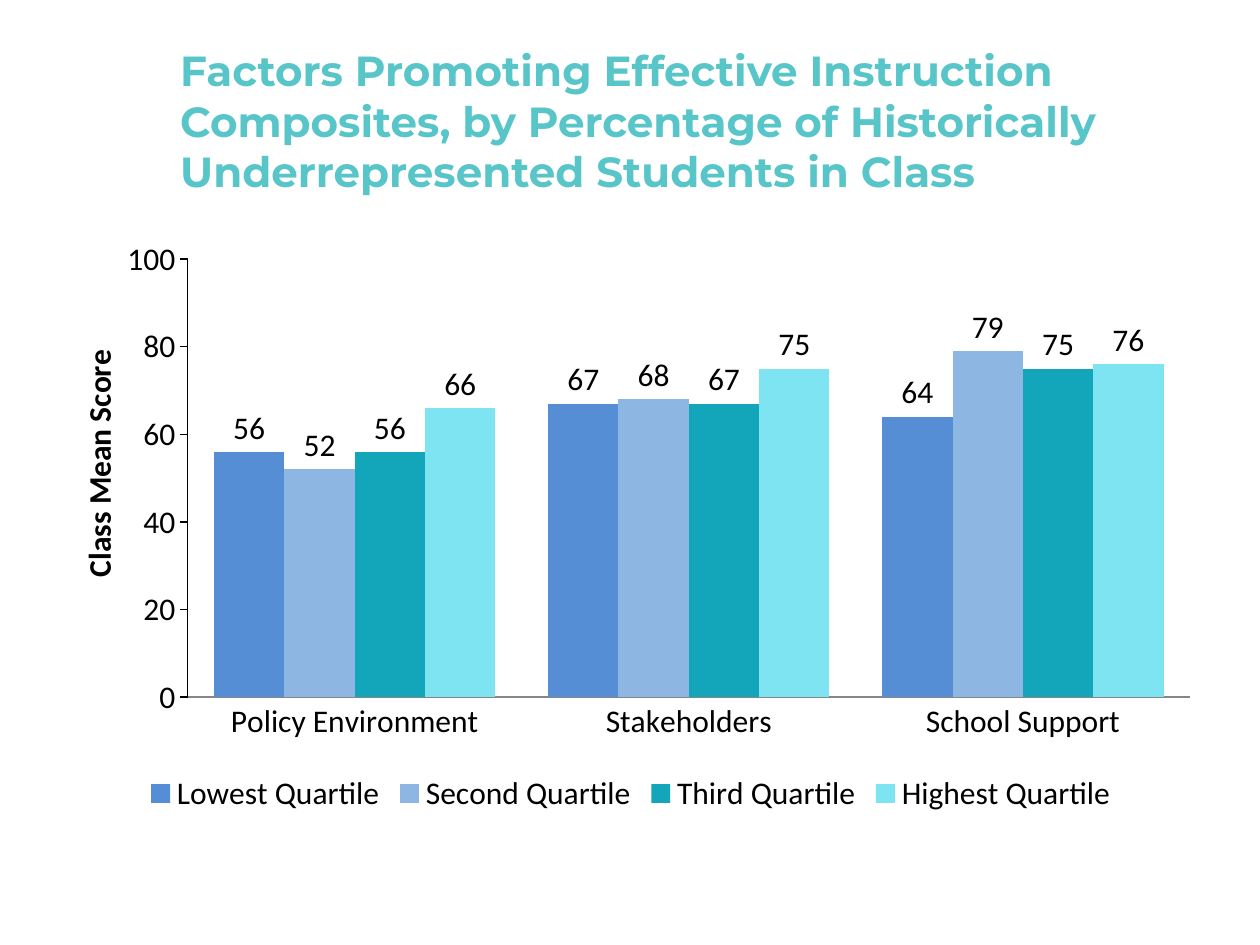
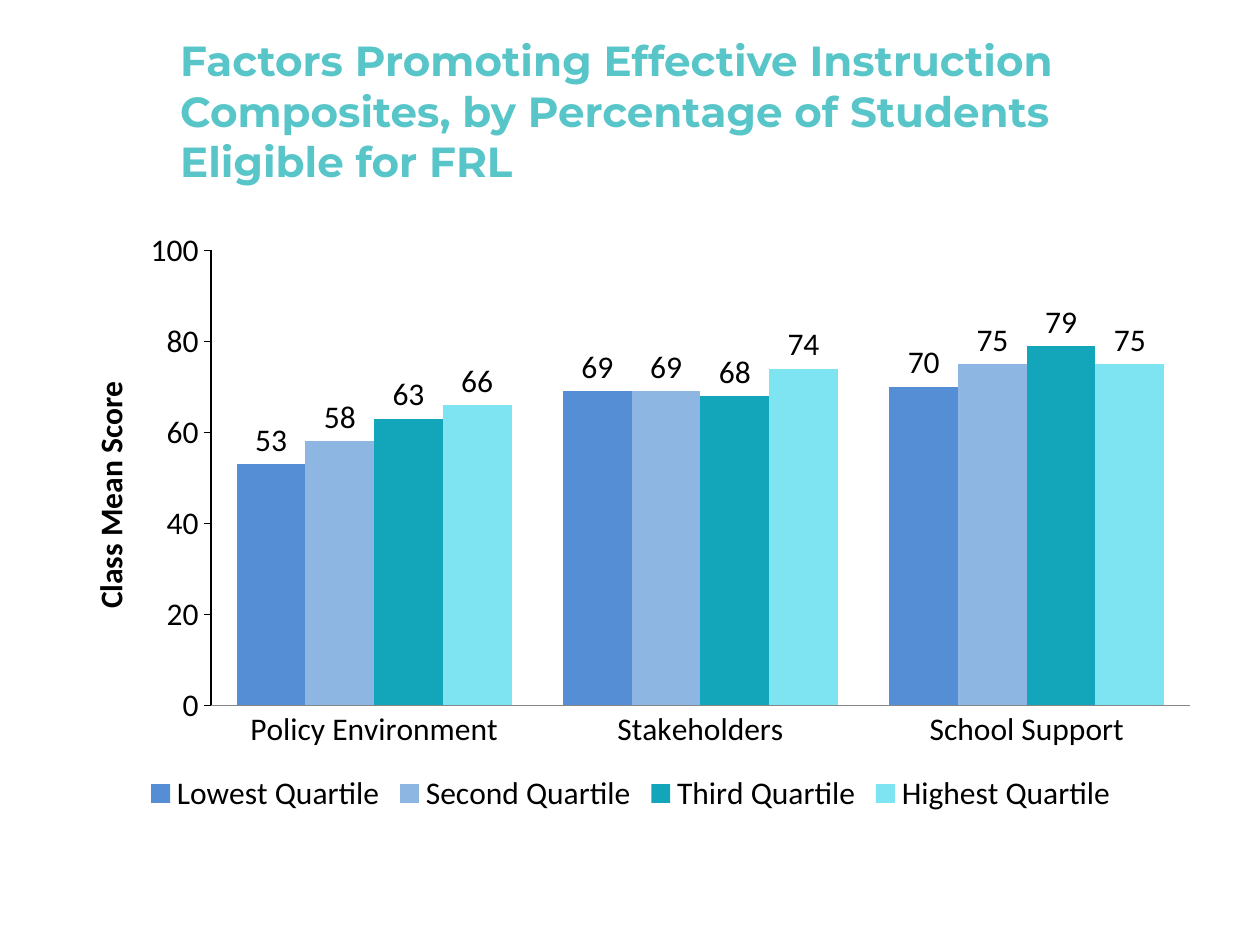
from lxml import etree
from pptx import Presentation
from pptx.chart.data import CategoryChartData
from pptx.dml.color import RGBColor
from pptx.enum.chart import XL_CHART_TYPE, XL_LABEL_POSITION, XL_LEGEND_POSITION, XL_TICK_MARK
from pptx.enum.text import MSO_ANCHOR, MSO_AUTO_SIZE, PP_ALIGN
from pptx.oxml.ns import qn
from pptx.util import Inches, Pt

COLUMNS = XL_CHART_TYPE.COLUMN_CLUSTERED
LABEL_ABOVE = XL_LABEL_POSITION.OUTSIDE_END
LEGEND_BOTTOM = XL_LEGEND_POSITION.BOTTOM
TICK_NONE = XL_TICK_MARK.NONE
TICK_OUTSIDE = XL_TICK_MARK.OUTSIDE
MIDDLE = MSO_ANCHOR.MIDDLE
NO_AUTOFIT = MSO_AUTO_SIZE.NONE
LEFT = PP_ALIGN.LEFT

TITLE_ONLY = 5
COLORS = {
    "title": "58C5C9",
    "text": "000000",
    "baseline": "868686",
    "Lowest Quartile": "558ED5",
    "Second Quartile": "8EB6E3",
    "Third Quartile": "13A6BA",
    "Highest Quartile": "7FE4F2",
}
QUARTILES = ["Lowest Quartile", "Second Quartile", "Third Quartile", "Highest Quartile"]
COMPOSITES = ["Policy Environment", "Stakeholders", "School Support"]
TITLE_START = "Factors Promoting Effective Instruction Composites, by Percentage of "

SLIDES = [
    {
        "title": TITLE_START + "Historically Underrepresented Students in Class",
        "title_box": (1.33, 0.33, 8.58, 1.25),
        "chart_box": (0.38, 1.67, 9.25, 4.83),
        "plot_area": {"x": 0.12, "y": 0.08, "w": 0.86, "h": 0.72},
        "axis_title": {"x": 0.02, "y": 0.22},
        "scores": [(56, 67, 64), (52, 68, 79), (56, 67, 75), (66, 75, 76)],
    },
    {
        "title": TITLE_START + "Students Eligible for FRL",
        "title_box": (1.33, 0.25, 8.15, 1.25),
        "chart_box": (0.38, 1.75, 9.25, 4.75),
        "plot_area": {"x": 0.14, "y": 0.05, "w": 0.84, "h": 0.76},
        "axis_title": {"x": 0.03, "y": 0.26},
        "scores": [(53, 69, 70), (58, 69, 75), (63, 68, 79), (66, 74, 75)],
    },
]


def color(name):
    return RGBColor.from_string(COLORS[name])


def place(element, position, inner=False):
    layout = element.find(qn("c:layout"))
    if layout is None:
        layout = etree.Element(qn("c:layout"))
        element.insert(0, layout)
    manual = etree.SubElement(layout, qn("c:manualLayout"))
    settings = [("layoutTarget", "inner")] if inner else []
    settings += [("xMode", "edge"), ("yMode", "edge"), *position.items()]
    for tag, value in settings:
        etree.SubElement(manual, qn(f"c:{tag}")).set("val", str(value))


class Deck:
    def __init__(self):
        self.deck = Presentation()
        self.deck.slide_width = Inches(10)
        self.deck.slide_height = Inches(7.5)
        self.page = None

    def add_page(self):
        self.page = self.deck.slides.add_slide(self.deck.slide_layouts[TITLE_ONLY])

    def style(self, font, name, size, color_name, bold=False):
        font.name = name
        font.size = Pt(size)
        font.bold = bold
        font.color.rgb = color(color_name)

    def title(self, text, bounds):
        box = self.page.shapes.title
        box.left, box.top, box.width, box.height = map(Inches, bounds)
        frame = box.text_frame
        frame.text = text
        frame.word_wrap = True
        frame.auto_size = NO_AUTOFIT
        frame.vertical_anchor = MIDDLE
        para = frame.paragraphs[0]
        para.alignment = LEFT
        self.style(para.font, "Montserrat", 24, "title", bold=True)

    def score_chart(self, scores, bounds, plot_area, axis_title):
        data = CategoryChartData(number_format="0")
        data.categories = COMPOSITES
        for quartile, values in zip(QUARTILES, scores):
            data.add_series(quartile, values)
        chart = self.page.shapes.add_chart(COLUMNS, *map(Inches, bounds), data).chart
        self.style(chart.font, "Calibri", 18, "text")
        chart.has_title = False
        chart.has_legend = True
        chart.legend.position = LEGEND_BOTTOM
        chart.legend.include_in_layout = False
        self.columns(chart.plots[0])
        self.axes(chart, axis_title)
        place(chart.element.find(".//" + qn("c:plotArea")), plot_area, inner=True)

    def columns(self, plot):
        plot.gap_width = 75
        plot.overlap = 0
        plot.vary_by_categories = False
        for series in plot.series:
            series.format.fill.solid()
            series.format.fill.fore_color.rgb = color(series.name)
            labels = series.data_labels
            labels.show_value = True
            labels.position = LABEL_ABOVE

    def axes(self, chart, title_position):
        category_axis, value_axis = chart.category_axis, chart.value_axis
        category_axis.major_tick_mark = TICK_NONE
        value_axis.major_tick_mark = TICK_OUTSIDE
        value_axis.has_major_gridlines = False
        value_axis.minimum_scale = 0
        value_axis.maximum_scale = 100
        value_axis.major_unit = 20
        for axis, line_color in ((category_axis, "baseline"), (value_axis, "text")):
            axis.format.line.color.rgb = color(line_color)
            axis.format.line.width = Pt(0.75)
        title = value_axis.axis_title
        title.text_frame.text = "Class Mean Score"
        self.style(title.text_frame.paragraphs[0].font, "Calibri", 18, "text", bold=True)
        place(title.element, title_position)


def main():
    builder = Deck()
    for content in SLIDES:
        builder.add_page()
        builder.title(content["title"], content["title_box"])
        builder.score_chart(
            content["scores"], content["chart_box"], content["plot_area"], content["axis_title"]
        )
    builder.deck.save("out.pptx")


if __name__ == "__main__":
    main()
